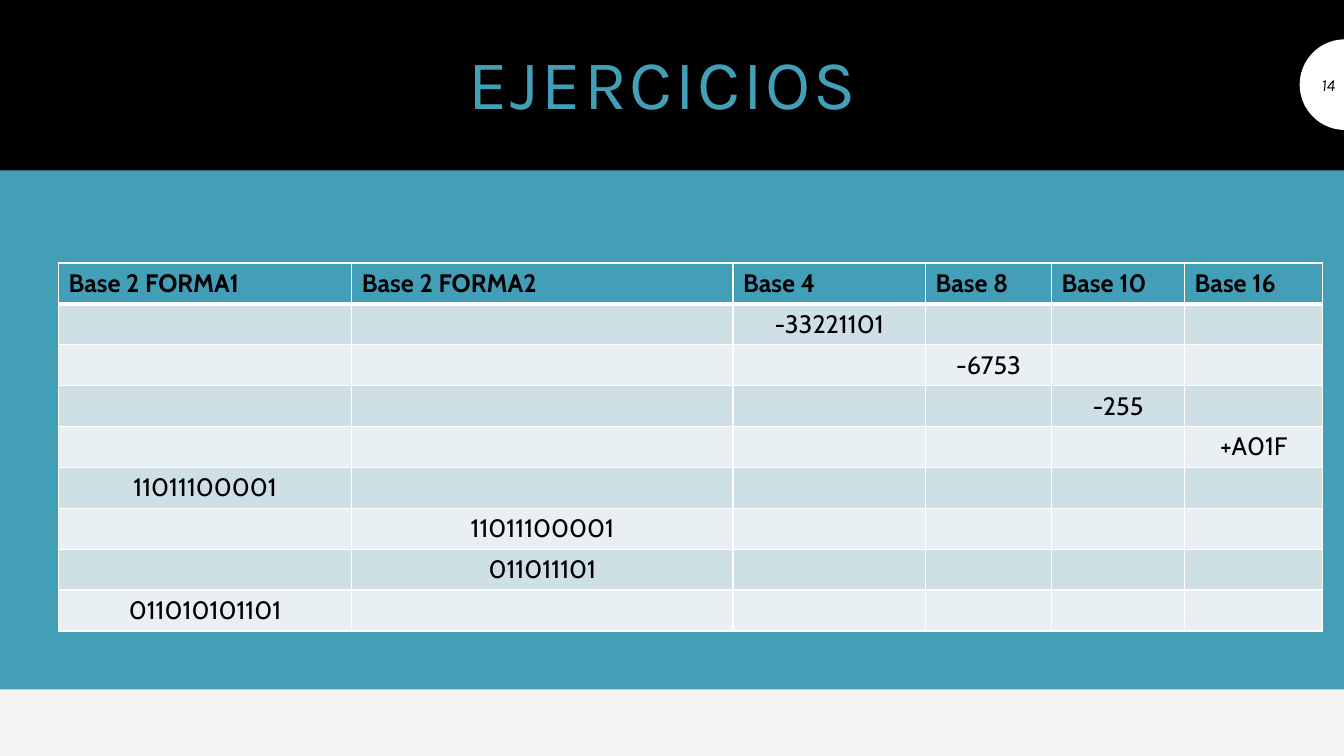
from math import cos, pi, sin

from lxml.etree import SubElement
from pptx import Presentation
from pptx.dml.color import RGBColor
from pptx.enum.shapes import MSO_SHAPE
from pptx.enum.text import MSO_ANCHOR, PP_ALIGN
from pptx.oxml import parse_xml
from pptx.oxml.ns import nsdecls, qn
from pptx.util import Emu, Pt

PX = 9144
TEAL, BLACK, WHITE = "439EB7", "000000", "FFFFFF"
BANDS = ["CFDFE6", "E9F0F3"]
HEADERS = ["Base 2 FORMA1", "Base 2 FORMA2", "Base 4", "Base 8", "Base 10", "Base 16"]
COLUMN_WIDTHS = [291, 378, 191, 125, 132, 137]
EXERCISES = [
    (2, "-33221101"),
    (3, "-6753"),
    (4, "-255"),
    (5, "+A01F"),
    (0, "11011100001"),
    (1, "11011100001"),
    (1, "011011101"),
    (0, "011010101101"),
]


def px(*lengths):
    """Turn pixel lengths into EMU."""
    return [Emu(round(length * PX)) for length in lengths]


def paint(fill, color):
    """Give a fill one solid hex colour."""
    fill.solid()
    fill.fore_color.rgb = RGBColor.from_string(color)


def write(frame, text, size, font, color=BLACK, bold=False, italic=False,
          align=PP_ALIGN.LEFT, line_spacing=None, tracking=None):
    """Write one formatted paragraph into a text frame."""
    para = frame.paragraphs[0]
    para.alignment = align
    if line_spacing:
        para.line_spacing = line_spacing
    span = para.add_run()
    span.text = text
    span.font.size = Pt(size)
    span.font.name = font
    span.font.bold = bold
    span.font.italic = italic
    span.font.color.rgb = RGBColor.from_string(color)
    if tracking:
        span.font._element.set("spc", str(tracking))


def add_panel(page, box, color):
    """Draw a plain full-colour rectangle."""
    panel = page.shapes.add_shape(MSO_SHAPE.RECTANGLE, *px(*box))
    panel.shadow.inherit = False
    paint(panel.fill, color)
    panel.line.fill.background()


def add_title(page, box):
    """Place the title placeholder inside the header band."""
    left, top, width, height = box
    title = page.shapes.title
    title.left, title.top, title.width, title.height = px(left + 83, top + 31, width - 165, height - 59)
    title.text_frame.vertical_anchor = MSO_ANCHOR.MIDDLE
    write(title.text_frame, "EJERCICIOS ", 50, "Karla", TEAL,
          align=PP_ALIGN.CENTER, line_spacing=0.9, tracking=200)


def add_page_number(page, box, number):
    """Draw a half disc against the right edge of the box, with the page number in it."""
    left, top, width, height = box
    radius = height / 2
    steps = 26
    arc = [(left + width - radius * sin(pi * step / steps),
            top + radius - radius * cos(pi * step / steps)) for step in range(steps + 1)]
    builder = page.shapes.build_freeform(*px(*arc[0]))
    builder.add_line_segments([px(*point) for point in arc[1:]], close=True)
    disc = builder.convert_to_shape()
    disc.shadow.inherit = False
    paint(disc.fill, WHITE)
    disc.line.fill.background()

    label = page.shapes.add_textbox(*px(left, top + 25, width, 40))
    label.text_frame.word_wrap = True
    label.text_frame.vertical_anchor = MSO_ANCHOR.MIDDLE
    write(label.text_frame, number, 12, "Karla", italic=True, align=PP_ALIGN.RIGHT)


def set_borders(cell, top=1, bottom=1):
    """Give a cell white borders, with widths in points."""
    properties = cell._tc.get_or_add_tcPr()
    widths = {"lnL": 1, "lnR": 1, "lnT": top, "lnB": bottom}
    for position, (side, width) in enumerate(widths.items()):
        border = parse_xml(f'<a:{side} {nsdecls("a")} w="{Pt(width)}"/>')
        fill = SubElement(border, qn("a:solidFill"))
        SubElement(fill, qn("a:srgbClr"), val=WHITE)
        properties.insert(position, border)


def add_exercises(page, box):
    """Build the table of bases with one given number per row."""
    table = page.shapes.add_table(len(EXERCISES) + 1, len(HEADERS), *px(*box)).table
    for column, width in zip(table.columns, px(*COLUMN_WIDTHS)):
        column.width = width
    for index, header in enumerate(HEADERS):
        cell = table.cell(0, index)
        paint(cell.fill, TEAL)
        set_borders(cell, bottom=3)
        write(cell.text_frame, header, 18, "Cabin", bold=True)
    for row, (given, number) in enumerate(EXERCISES, start=1):
        for index in range(len(HEADERS)):
            cell = table.cell(row, index)
            paint(cell.fill, BANDS[(row - 1) % 2])
            set_borders(cell, top=3 if row == 1 else 1)
        write(table.cell(row, given).text_frame, number, 18, "Cabin", align=PP_ALIGN.CENTER)


def main():
    """Build the slide and save it."""
    deck = Presentation()
    deck.slide_width, deck.slide_height = px(1333, 750)
    page = deck.slides.add_slide(deck.slide_layouts[5])
    paint(page.background.fill, "F5F5F5")
    header = (0, 0, 1333, 169)
    add_panel(page, (0, 168, 1333, 516), TEAL)
    add_panel(page, header, BLACK)
    title = page.shapes.title._element
    title.getparent().append(title)
    add_title(page, header)
    add_page_number(page, (1289, 39, 45, 90), "14")
    add_exercises(page, (58, 261, 1254, 365))
    deck.save("out.pptx")


if __name__ == "__main__":
    main()
